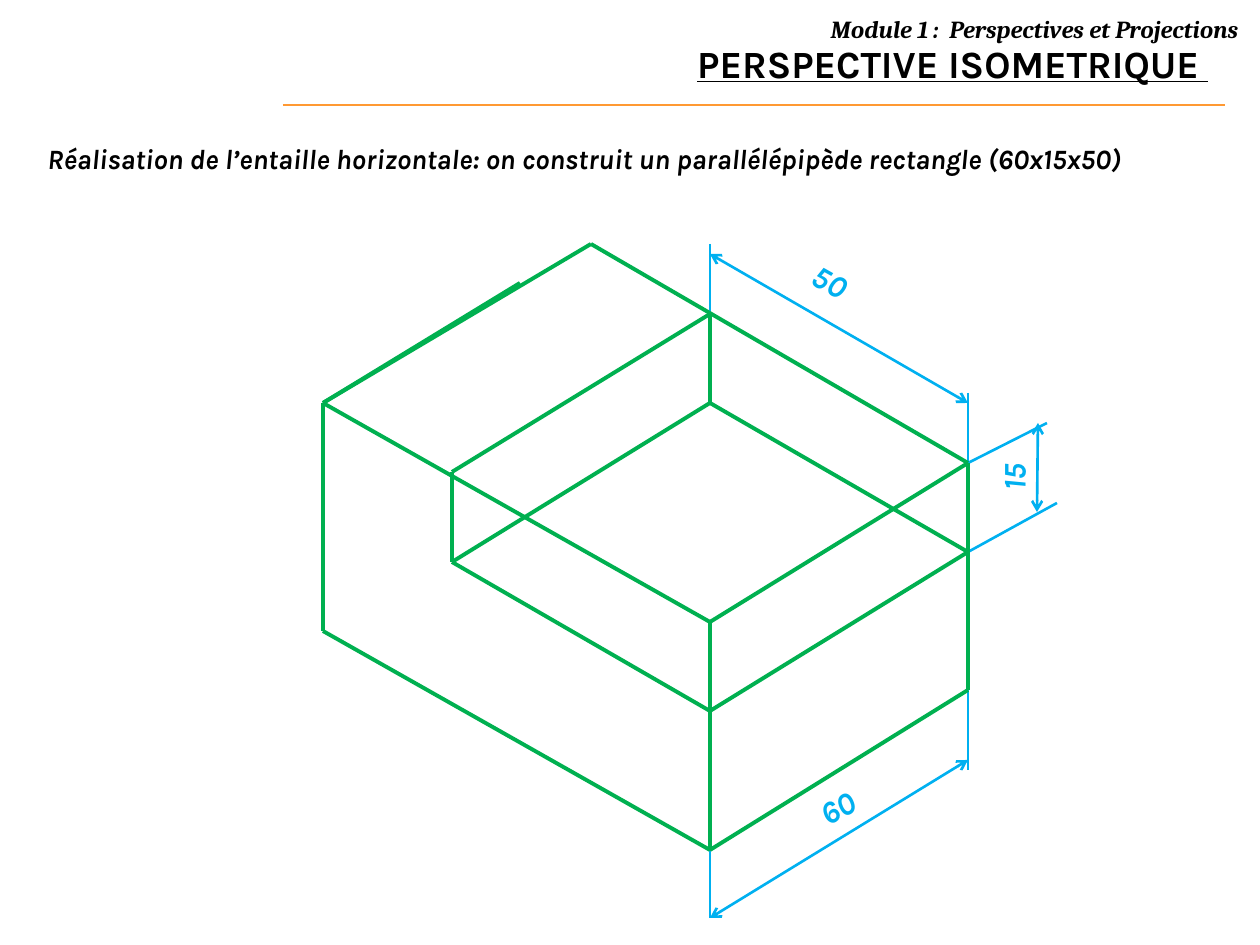
from lxml import etree
from pptx import Presentation
from pptx.dml.color import RGBColor
from pptx.enum.shapes import MSO_CONNECTOR
from pptx.enum.text import PP_ALIGN
from pptx.oxml.ns import qn
from pptx.util import Emu, Pt

STRAIGHT = MSO_CONNECTOR.STRAIGHT
LEFT, RIGHT = PP_ALIGN.LEFT, PP_ALIGN.RIGHT
PX = 914400 / 126
COLORS = {"text": "000000", "rule": "FF9933", "dimension": "00B0F0", "edge": "00B050"}

presentation = Presentation()
presentation.slide_width, presentation.slide_height = Emu(round(1260 * PX)), Emu(round(945 * PX))
slide = presentation.slides.add_slide(presentation.slide_layouts[6])


def add_line(start, end, color, width=1.5, arrows=False):
    x1, y1, x2, y2 = [Emu(round(value * PX)) for value in (*start, *end)]
    connector = slide.shapes.add_connector(STRAIGHT, x1, y1, x2, y2)
    connector.line.color.rgb = RGBColor.from_string(COLORS[color])
    connector.line.width = Pt(width)
    if arrows:
        outline = connector.line._get_or_add_ln()
        for tag in ("a:headEnd", "a:tailEnd"):
            etree.SubElement(outline, qn(tag), type="arrow")
    etree.SubElement(connector._element.spPr, qn("a:effectLst"))


def add_text(box, text, size, color="text", font="Karla", align=LEFT,
             italic=True, underline=False, rotation=0):
    shape = slide.shapes.add_textbox(*[Emu(round(value * PX)) for value in box])
    shape.rotation = rotation
    shape.text_frame.word_wrap = True
    paragraph = shape.text_frame.paragraphs[0]
    paragraph.alignment = align
    run = paragraph.add_run()
    run.text = text
    run.font.name, run.font.size = font, Pt(size)
    run.font.bold, run.font.italic, run.font.underline = True, italic, underline
    run.font.color.rgb = RGBColor.from_string(COLORS[color])
    return paragraph


# Header, title and explanation
add_line((283, 105), (1225, 105), "rule")
header = add_text((471, 3, 780, 43), "Module 1 :  Perspectives et Projections", 14,
                  font="Cambria", align=RIGHT)
header.line_spacing = 1.15
header.space_after = Pt(10)
add_text((253, 34, 968, 147), "PERSPECTIVE ISOMETRIQUE ", 22, align=RIGHT,
         italic=False, underline=True)
add_text((35, 135, 1225, 73), "Réalisation de l’entaille horizontale: on construit un "
         "parallélépipède rectangle (60x15x50)", 16)

# Dimension values, turned along their lines
for value, box, rotation in [
    ("60", (808, 776, 81, 59), 329.9),
    ("50", (798, 261, 81, 59), 29.3),
    ("15", (982, 428, 81, 69), 270),
]:
    add_text(box, value, 18, color="dimension", rotation=rotation)

# Corners of the block and of its notch
left_top, left_bottom = (323, 403), (323, 631)
front_top, front_bottom = (710, 622), (710, 850)
right_top, right_bottom = (968, 463), (968, 690)
back_top = (591, 244)
notch_back_top, notch_back_bottom = (710, 314), (710, 403)
notch_left_top, notch_left_bottom = (452, 472), (452, 562)
notch_front, notch_right = (710, 711), (968, 552)

# Extension lines
for start, end in [
    ((710, 244), (710, 324)),
    ((968, 393), (968, 473)),
    ((710, 839), (710, 918)),
    ((968, 690), (968, 770)),
    (notch_right, (1057, 503)),
    (right_top, (1047, 423)),
]:
    add_line(start, end, "dimension")

# Dimension lines with arrows
for start, end in [
    ((710, 918), (968, 760)),
    ((968, 403), (710, 254)),
    ((1038, 423), (1037, 512)),
]:
    add_line(start, end, "dimension", arrows=True)

# Edges of the notch, then of the block
for start, end in [
    (left_top, (520, 283)),
    (notch_left_top, notch_back_top),
    (notch_left_bottom, notch_back_bottom),
    (notch_back_top, notch_back_bottom),
    (notch_left_top, notch_left_bottom),
    (notch_front, notch_right),
    (notch_right, notch_back_bottom),
    (notch_front, notch_left_bottom),
    (front_top, right_top),
    (front_top, left_top),
    (front_top, front_bottom),
    (right_top, back_top),
    (front_bottom, left_bottom),
    (right_top, right_bottom),
    (left_top, left_bottom),
    (front_bottom, right_bottom),
    (left_top, back_top),
]:
    add_line(start, end, "edge", width=2.25)

presentation.save("out.pptx")
